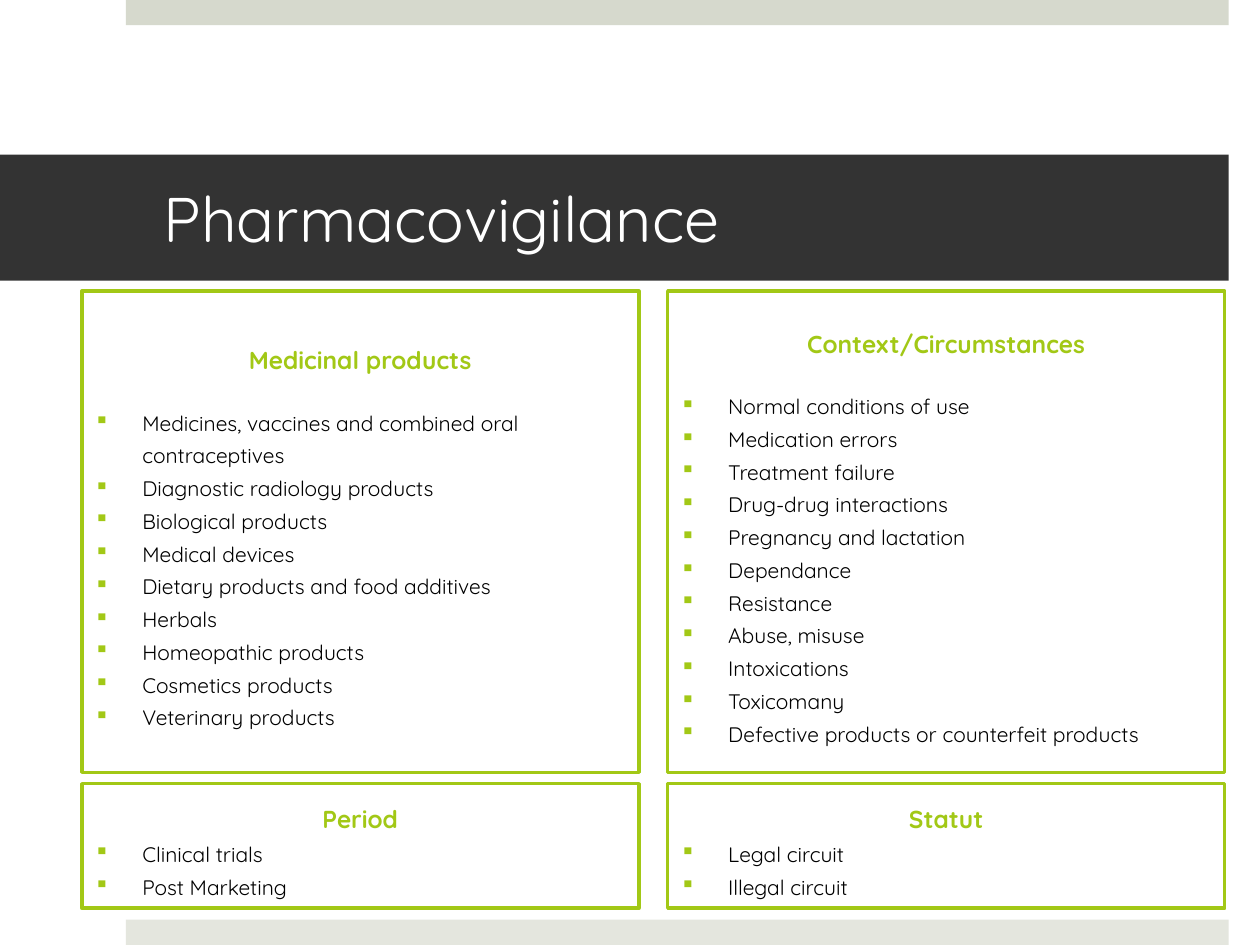
from lxml import etree
from pptx import Presentation
from pptx.dml.color import RGBColor
from pptx.enum.shapes import MSO_SHAPE as Shape
from pptx.enum.text import MSO_ANCHOR as Anchor, PP_ALIGN as Align
from pptx.oxml.ns import qn
from pptx.util import Cm, Pt

FONT = "Quicksand"
COLORS = {
    "top band": "D6D9CD",
    "bottom band": "E4E6DE",
    "title bar": "333333",
    "white": "FFFFFF",
    "green": "A2C816",
    "black": "000000",
}

# Heading, space after the heading in points, bullet items; row by row
ROWS = [
    [
        ("Medicinal products", 16, [
            "Medicines, vaccines and combined oral contraceptives",
            "Diagnostic radiology products",
            "Biological products",
            "Medical devices",
            "Dietary products and food additives",
            "Herbals",
            "Homeopathic products",
            "Cosmetics products",
            "Veterinary products",
        ]),
        ("Context/Circumstances", 16, [
            "Normal conditions of use",
            "Medication errors",
            "Treatment failure",
            "Drug-drug interactions",
            "Pregnancy and lactation",
            "Dependance",
            "Resistance",
            "Abuse, misuse",
            "Intoxications",
            "Toxicomany",
            "Defective products or counterfeit products",
        ]),
    ],
    [
        ("Period", 0, ["Clinical trials", "Post Marketing"]),
        ("Statut", 0, ["Legal circuit", "Illegal circuit"]),
    ],
]


def color(name):
    return RGBColor.from_string(COLORS[name])


def add_block(slide, box, fill, border=None):
    """Add a flat rectangle; box is left, top, width, height in cm."""
    block = slide.shapes.add_shape(Shape.RECTANGLE, *map(Cm, box))
    block.shadow.inherit = False
    block.fill.solid()
    block.fill.fore_color.rgb = color(fill)
    if border:
        block.line.color.rgb = color(border)
        block.line.width = Pt(2)
    else:
        block.line.fill.background()
    return block


def style_text(paragraph, size, tint, align=Align.LEFT, bold=False):
    paragraph.alignment = align
    for run in paragraph.runs:
        run.font.name = FONT
        run.font.size = Pt(size)
        run.font.bold = bold
        run.font.color.rgb = color(tint)


def add_bullet(paragraph, indent):
    properties = paragraph._p.get_or_add_pPr()
    properties.set("marL", str(Cm(indent)))
    properties.set("indent", str(-Cm(indent)))
    tint = etree.SubElement(properties, qn("a:buClr"))
    etree.SubElement(tint, qn("a:srgbClr"), val=COLORS["green"])
    etree.SubElement(properties, qn("a:buChar"), char="▪")


def add_title(slide, box, title):
    frame = add_block(slide, box, "title bar").text_frame
    frame.text = title
    frame.word_wrap = True
    frame.vertical_anchor = Anchor.MIDDLE
    frame.margin_left, frame.margin_right = Cm(3.3), Cm(0.76)
    style_text(frame.paragraphs[0], 36, "white")


def add_panel(slide, box, heading, heading_gap, items):
    frame = add_block(slide, box, "white", "green").text_frame
    frame.text = "\n".join([heading, *items])
    frame.word_wrap = True
    frame.vertical_anchor = Anchor.MIDDLE

    heading_line, *item_lines = frame.paragraphs
    heading_line.line_spacing = 1.4
    heading_line.space_after = Pt(heading_gap)
    style_text(heading_line, 14, "green", Align.CENTER, bold=True)
    for item_line in item_lines:
        item_line.line_spacing = 1.3
        style_text(item_line, 12, "black")
        add_bullet(item_line, 0.97)


def add_panel_grid(slide, left, top, width, row_heights, gap_x, gap_y):
    panel_width = (width - gap_x) / 2
    for row, height in zip(ROWS, row_heights):
        for column, panel in enumerate(row):
            panel_left = left + column * (panel_width + gap_x)
            add_panel(slide, (panel_left, top, panel_width, height), *panel)
        top += height + gap_y


def main():
    deck = Presentation()
    deck.slide_width, deck.slide_height = Cm(25.4), Cm(19.05)
    slide = deck.slides.add_slide(deck.slide_layouts[6])

    # Bands along the top and bottom edges
    add_block(slide, (2.54, 0, 22.23, 0.51), "top band")
    add_block(slide, (2.54, 18.54, 22.23, 0.51), "bottom band")

    # Title bar and the four panels
    add_title(slide, (0, 3.12, 24.77, 2.54), "Pharmacovigilance")
    add_panel_grid(slide, left=1.65, top=5.87, width=23.04,
                   row_heights=(9.7, 2.51), gap_x=0.58, gap_y=0.23)

    deck.save("out.pptx")


if __name__ == "__main__":
    main()
